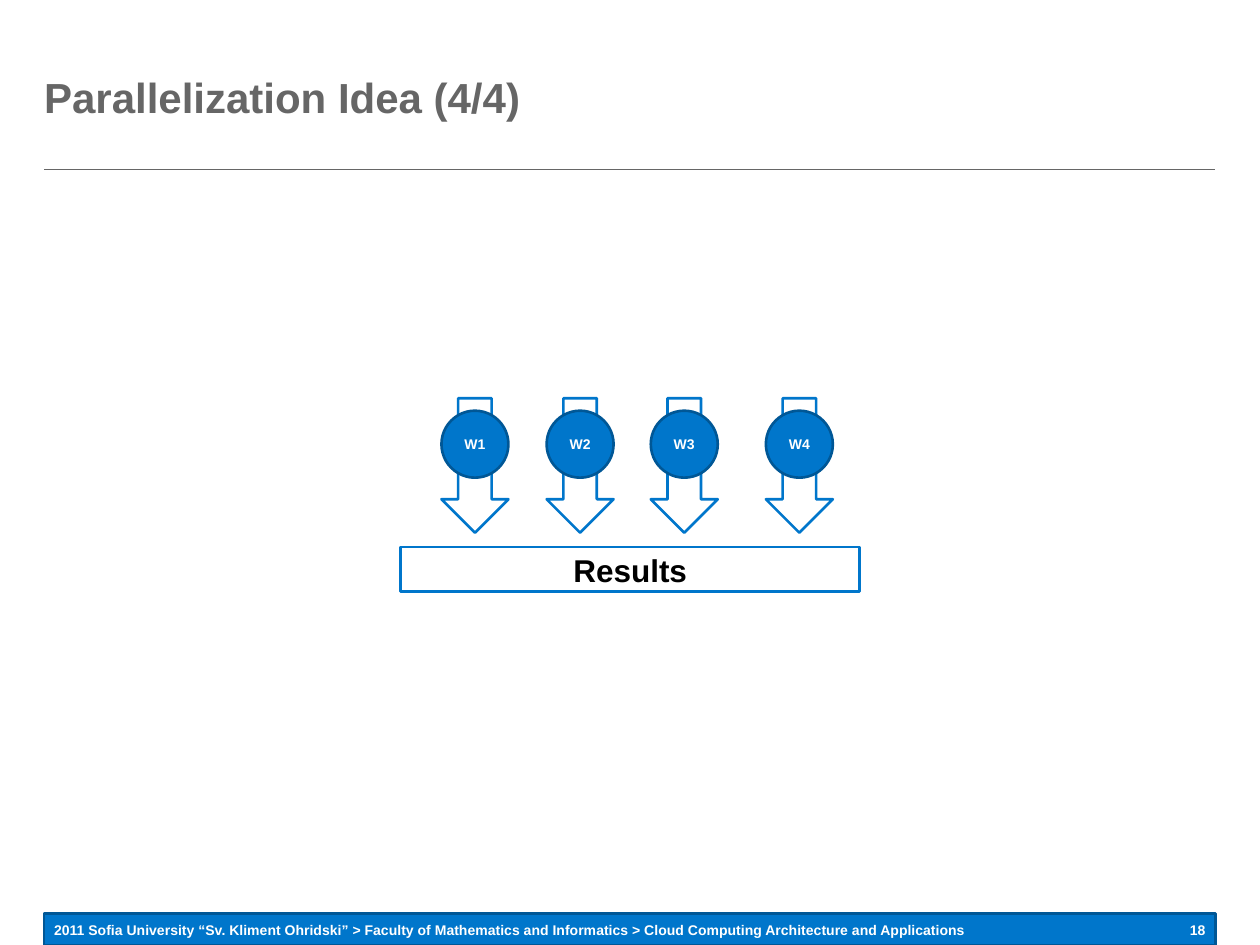
from pptx import Presentation
from pptx.dml.color import RGBColor
from pptx.enum.shapes import MSO_CONNECTOR, MSO_SHAPE
from pptx.enum.text import MSO_ANCHOR, MSO_AUTO_SIZE, PP_ALIGN
from pptx.oxml.ns import qn
from pptx.util import Cm, Pt

TITLE = "Parallelization Idea (4/4)"
FOOTER = ("2011 Sofia University “Sv. Kliment Ohridski” > Faculty of Mathematics "
          "and Informatics > Cloud Computing Architecture and Applications")
PAGE = "18"
RESULTS = "Results"
WORKERS = [("W1", 8.9), ("W2", 11.02), ("W3", 13.12), ("W4", 15.44)]

THEME = {
    "font": "Arial",
    "grey": RGBColor(0x66, 0x66, 0x66),
    "blue": RGBColor(0x00, 0x76, 0xCB),
    "navy": RGBColor(0x00, 0x57, 0x96),
    "white": RGBColor(0xFF, 0xFF, 0xFF),
    "black": RGBColor(0x00, 0x00, 0x00),
    "title": 24, "label": 18, "small": 8,
    "rule": 0.5, "outline": 1.5,
}
LEFT, WIDTH = 0.89, 23.61
ARROW_TOP, ARROW_H, WORKER_TOP, WORKER_D = 8.03, 2.71, 8.28, 1.35
FOOTER_TOP, FOOTER_H = 18.59, 0.33


def write(tf, text, size, color, align, margins=(0, 0, 0, 0)):
    tf.margin_left, tf.margin_top, tf.margin_right, tf.margin_bottom = map(Cm, margins)
    tf.vertical_anchor = MSO_ANCHOR.MIDDLE
    p = tf.paragraphs[0]
    p.alignment = align
    r = p.add_run()
    r.text = text
    r.font.name = THEME["font"]
    r.font.size = Pt(THEME[size])
    r.font.bold = True
    r.font.color.rgb = THEME[color]


def add_box(s, kind, box, fill, line):
    sp = s.shapes.add_shape(kind, *map(Cm, box))
    sp.shadow.inherit = False
    sp.fill.solid()
    sp.fill.fore_color.rgb = THEME[fill]
    sp.line.color.rgb = THEME[line]
    sp.line.width = Pt(THEME["outline"])
    return sp


def add_label(sp, text, size, color):
    write(sp.text_frame, text, size, color, PP_ALIGN.CENTER, (0.25, 0.2, 0.25, 0.2))


def add_footer_text(s, text, left, width, align, margins):
    sp = s.shapes.add_textbox(Cm(left), Cm(FOOTER_TOP), Cm(width), Cm(FOOTER_H))
    sp.text_frame.word_wrap = False
    write(sp.text_frame, text, "small", "white", align, margins)


def add_frame(s):
    rule = s.shapes.add_connector(MSO_CONNECTOR.STRAIGHT, Cm(LEFT), Cm(3.42),
                                  Cm(LEFT + WIDTH), Cm(3.42))
    rule.line.color.rgb = THEME["grey"]
    rule.line.width = Pt(THEME["rule"])
    sp_pr = rule._element.spPr
    sp_pr.append(sp_pr.makeelement(qn("a:effectLst"), {}))
    add_box(s, MSO_SHAPE.RECTANGLE, (LEFT, 18.42, WIDTH, 0.63), "blue", "navy")
    add_footer_text(s, FOOTER, LEFT, 18.8, PP_ALIGN.LEFT, (0.2, 0, 0, 0))
    add_footer_text(s, PAGE, LEFT + WIDTH - 0.55, 0.55, PP_ALIGN.RIGHT, (0, 0, 0.2, 0))


def add_title(s):
    title = s.shapes.title
    title.left, title.top, title.width, title.height = map(Cm, (LEFT, 0.89, WIDTH, 2.11))
    title.text_frame.auto_size = MSO_AUTO_SIZE.NONE
    write(title.text_frame, TITLE, "title", "grey", PP_ALIGN.LEFT)


def add_diagram(s):
    for _, x in WORKERS:
        add_box(s, MSO_SHAPE.DOWN_ARROW, (x, ARROW_TOP, WORKER_D, ARROW_H), "white", "blue")
    for name, x in WORKERS:
        sp = add_box(s, MSO_SHAPE.OVAL, (x, WORKER_TOP, WORKER_D, WORKER_D), "blue", "navy")
        add_label(sp, name, "small", "white")
    sp = add_box(s, MSO_SHAPE.RECTANGLE, (8.08, 11.03, 9.25, 0.9), "white", "blue")
    add_label(sp, RESULTS, "label", "black")


def main():
    prs = Presentation()
    prs.slide_width, prs.slide_height = Cm(25.4), Cm(19.05)
    s = prs.slides.add_slide(prs.slide_layouts[5])
    add_frame(s)
    add_title(s)
    add_diagram(s)
    prs.save("out.pptx")


if __name__ == "__main__":
    main()
